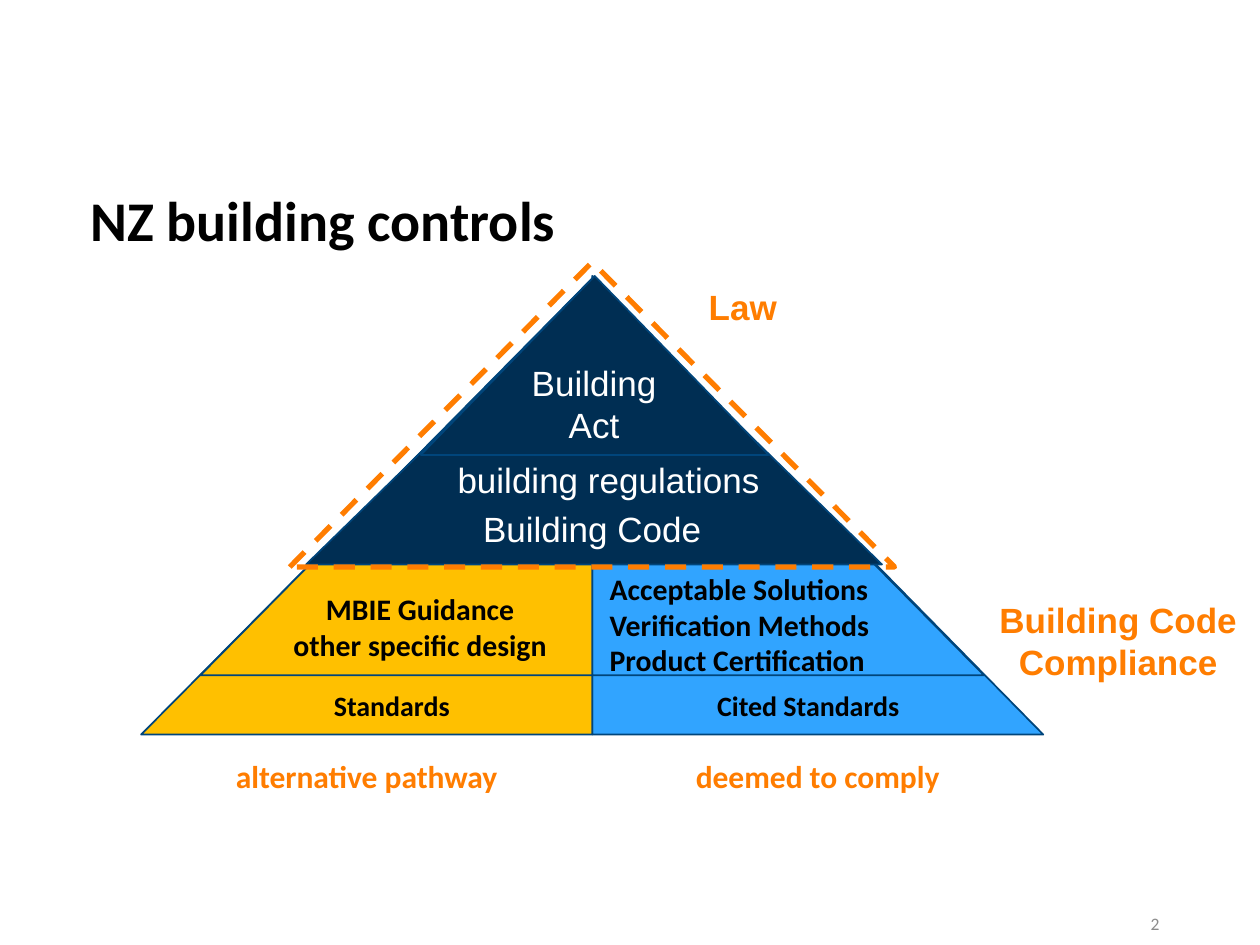
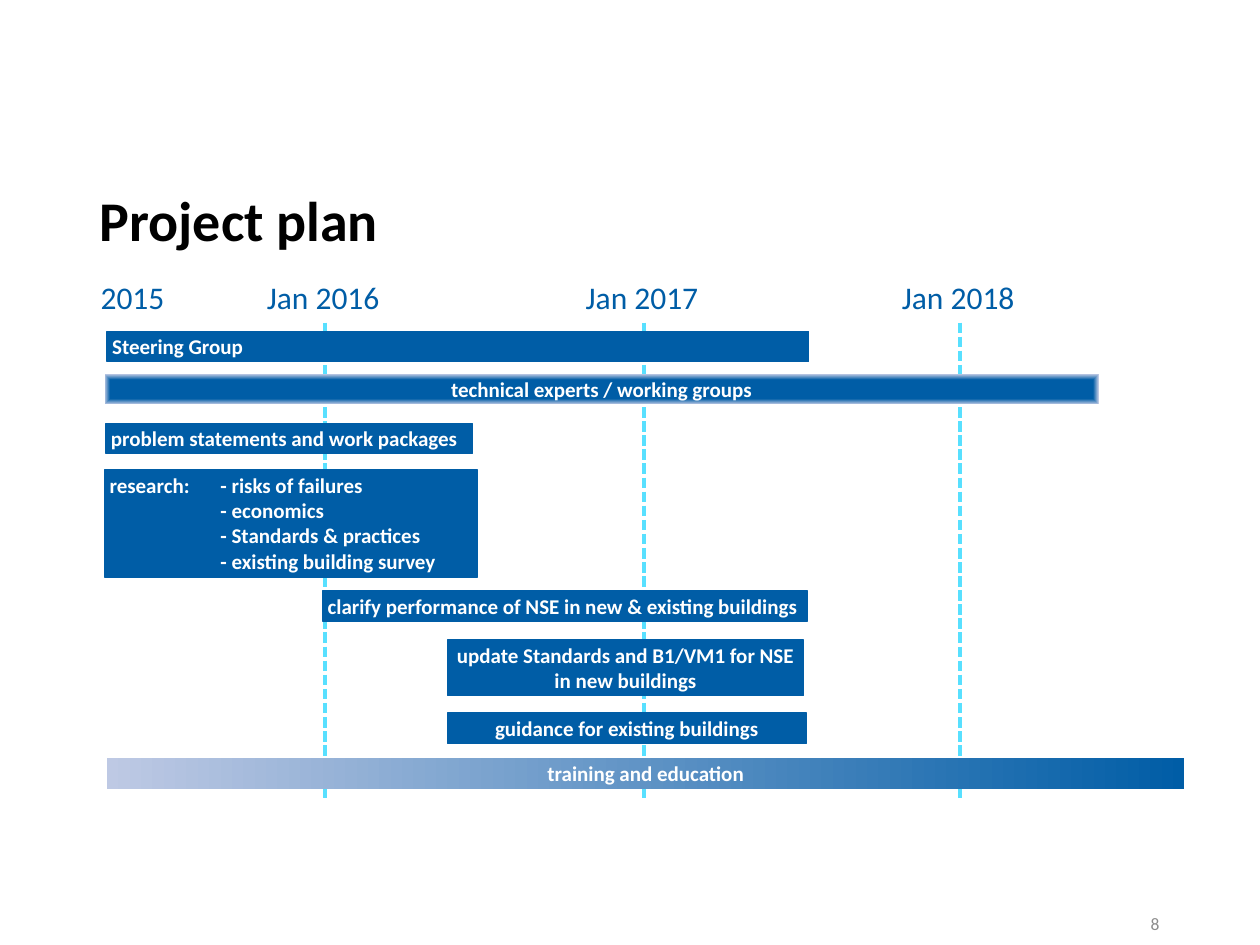
"""Build two slides: a pyramid of building controls and a project plan."""
from dataclasses import dataclass

from lxml.etree import SubElement as Sub
from pptx import Presentation
from pptx.dml.color import RGBColor as Rgb
from pptx.enum.dml import MSO_LINE as Dash
from pptx.enum.shapes import MSO_CONNECTOR as Wire, MSO_SHAPE as Geo
from pptx.enum.text import MSO_ANCHOR as Anchor, PP_ALIGN as Align
from pptx.oxml.ns import qn
from pptx.util import Pt

SCALE = 9144


@dataclass(frozen=True)
class Theme:
    body: str = "Calibri"
    sans: str = "Arial"
    black: str = "000000"
    white: str = "FFFFFF"
    gray: str = "8C8C8C"
    navy: str = "002E53"
    edge: str = "00457B"
    sky: str = "31A4FF"
    gold: str = "FFC000"
    orange: str = "FF7D00"
    blue: str = "005DA6"
    pale: str = "BEC9E4"
    cyan: str = "58E0FF"
    title: int = 32
    large: int = 20
    label: int = 18
    cell: int = 17
    base: int = 16
    bar: int = 12
    foot: int = 10


T = Theme()


def px(*vals):
    return [val * SCALE for val in vals]


def write(frame, text, size=T.label, color=T.black, font=T.body, bold=False,
          align=Align.LEFT, anchor=Anchor.TOP, inset=(10, 5), space=None, tab=None):
    frame.word_wrap = True
    frame.vertical_anchor = anchor
    side, edge = px(*inset)
    frame.margin_left = frame.margin_right = side
    frame.margin_top = frame.margin_bottom = edge
    for num, line in enumerate(text.split("\n")):
        para = frame.add_paragraph() if num else frame.paragraphs[0]
        para.alignment = align
        if space:
            para.line_spacing = space
        if tab:
            tabs = Sub(para._p.get_or_add_pPr(), qn("a:tabLst"))
            Sub(tabs, qn("a:tab"), pos=str(tab * SCALE), algn="l")
        run = para.add_run()
        run.text = line
        run.font.name = font
        run.font.size = Pt(size)
        run.font.bold = bold
        run.font.color.rgb = Rgb.from_string(color)


def label(slide, box, text, **style):
    write(slide.shapes.add_textbox(*px(*box)).text_frame, text, **style)


def stroke(line, color, width, dash=None):
    line.color.rgb = Rgb.from_string(color)
    line.width = Pt(width)
    if dash:
        line.dash_style = dash


def block(slide, kind, box, fill=None, flip=False):
    shape = slide.shapes.add_shape(kind, *px(*box))
    shape.shadow.inherit = False
    if fill:
        shape.fill.solid()
        shape.fill.fore_color.rgb = Rgb.from_string(fill)
    else:
        shape.fill.background()
    shape.line.fill.background()
    if flip:
        shape.element.spPr.find(qn("a:xfrm")).set("flipH", "1")
    return shape


def fade(shape, start, radial=False):
    """Swap the empty fill for a blue to pale gradient."""
    props = shape.element.spPr
    blank = props.find(qn("a:noFill"))
    grad = props.makeelement(qn("a:gradFill"), {"rotWithShape": "1"})
    props.replace(blank, grad)
    stops = Sub(grad, qn("a:gsLst"))
    for pos, color in ((start, T.blue), (100, T.pale)):
        stop = Sub(stops, qn("a:gs"), pos=str(pos * 1000))
        Sub(stop, qn("a:srgbClr"), val=color)
    if radial:
        way = Sub(grad, qn("a:path"), path="shape")
        Sub(way, qn("a:fillToRect"), {side: "50000" for side in "ltrb"})
    else:
        Sub(grad, qn("a:lin"), ang=str(180 * 60000), scaled="0")


def bar(slide, box, text, align=Align.LEFT, tab=None, start=None, radial=False):
    if start is None:
        shape = block(slide, Geo.RECTANGLE, box, T.blue)
        stroke(shape.line, T.blue, 0.75)
    else:
        shape = block(slide, Geo.RECTANGLE, box)
        fade(shape, start, radial)
    write(shape.text_frame, text, size=T.bar, color=T.white, bold=True,
          align=align, inset=(4, 2), tab=tab)


def marker(slide, x, top, end):
    line = slide.shapes.add_connector(Wire.STRAIGHT, *px(x, top, x, end))
    stroke(line.line, T.cyan, 2, Dash.SQUARE_DOT)
    Sub(line.element.spPr, qn("a:effectLst"))


def page(deck, title, left, width, num):
    slide = deck.slides.add_slide(deck.slide_layouts[6])
    label(slide, (left, 127, width, 100), title, size=T.title, bold=True,
          anchor=Anchor.MIDDLE, space=0.9)
    label(slide, (705, 716, 225, 34), num, size=T.foot, color=T.gray,
          align=Align.RIGHT, anchor=Anchor.MIDDLE)
    return slide


def pyramid(deck):
    slide = page(deck, "NZ building controls", 62, 484, "2")
    right, peak = Geo.RIGHT_TRIANGLE, Geo.ISOSCELES_TRIANGLE
    for kind, box, fill, flip in (
        (right, (470, 219, 358, 364), T.sky, False),
        (right, (112, 222, 358, 361), T.gold, True),
        (right, (470, 221, 311, 315), T.sky, False),
        (right, (159, 221, 311, 315), T.gold, True),
        (peak, (243, 225, 457, 223), T.navy, False),
        (peak, (334, 219, 276, 142), T.navy, False),
    ):
        stroke(block(slide, kind, box, fill, flip).line, T.edge, 1)
    stroke(block(slide, peak, (230, 208, 480, 242)).line, T.orange, 3, Dash.DASH)

    mid = {"align": Align.CENTER}
    law = dict(mid, size=T.large, font=T.sans, color=T.white)
    for box, text in (
        ((294, 398, 352, 44), "Building Code"),
        ((358, 282, 227, 77), "Building\nAct"),
        ((307, 359, 352, 44), "building regulations"),
    ):
        label(slide, box, text, **law)
    note = dict(law, color=T.orange, bold=True)
    label(slide, (783, 470, 209, 77), "Building Code Compliance", **note)
    label(slide, (544, 222, 91, 44), "Law", **note)

    cell = {"bold": True, "anchor": Anchor.MIDDLE}
    label(slide, (474, 447, 300, 97),
          "Acceptable Solutions\nVerification Methods\nProduct Certification",
          size=T.cell, **cell)
    label(slide, (188, 449, 291, 97), "MBIE Guidance\nother specific design",
          size=T.cell, **mid, **cell)
    for left, width, text in ((463, 357, "Cited Standards"), (159, 304, "Standards")):
        label(slide, (left, 536, width, 48), text, size=T.base, **mid, **cell)
    for left, text in ((470, "deemed to comply"), (112, "alternative pathway")):
        label(slide, (left, 596, 358, 39), text, color=T.orange, **mid, **cell)


def plan(deck):
    slide = page(deck, "Project plan", 69, 862, "8")
    label(slide, (70, 216, 119, 40), "2015", color=T.blue)
    for x, year in ((258, 2016), (511, 2017), (762, 2018)):
        marker(slide, x, 256, 636)
        label(slide, (x - 56, 216, 114, 40), f"Jan {year}", color=T.blue)

    mid = {"align": Align.CENTER}
    research = ("research:\t- risks of failures\n\t- economics\n"
                "\t- Standards & practices\n\t- existing building survey")
    for box, text, style in (
        ((85, 263, 557, 24), "Steering Group", {}),
        ((83, 297, 789, 24), "technical experts / working groups",
         dict(mid, start=63, radial=True)),
        ((84, 336, 291, 24), "problem statements and work packages", {}),
        ((83, 373, 296, 85), research, {"tab": 88}),
        ((256, 469, 385, 24),
         "clarify performance of NSE in new & existing buildings", {}),
        ((355, 508, 283, 44),
         "update Standards and B1/VM1 for NSE in new buildings", mid),
        ((355, 566, 285, 24), "guidance for existing buildings", mid),
        ((85, 602, 855, 24), "training and education", dict(mid, start=0)),
    ):
        bar(slide, box, text, **style)


def main():
    deck = Presentation()
    deck.slide_width, deck.slide_height = px(1000, 750)
    pyramid(deck)
    plan(deck)
    deck.save("out.pptx")


if __name__ == "__main__":
    main()
